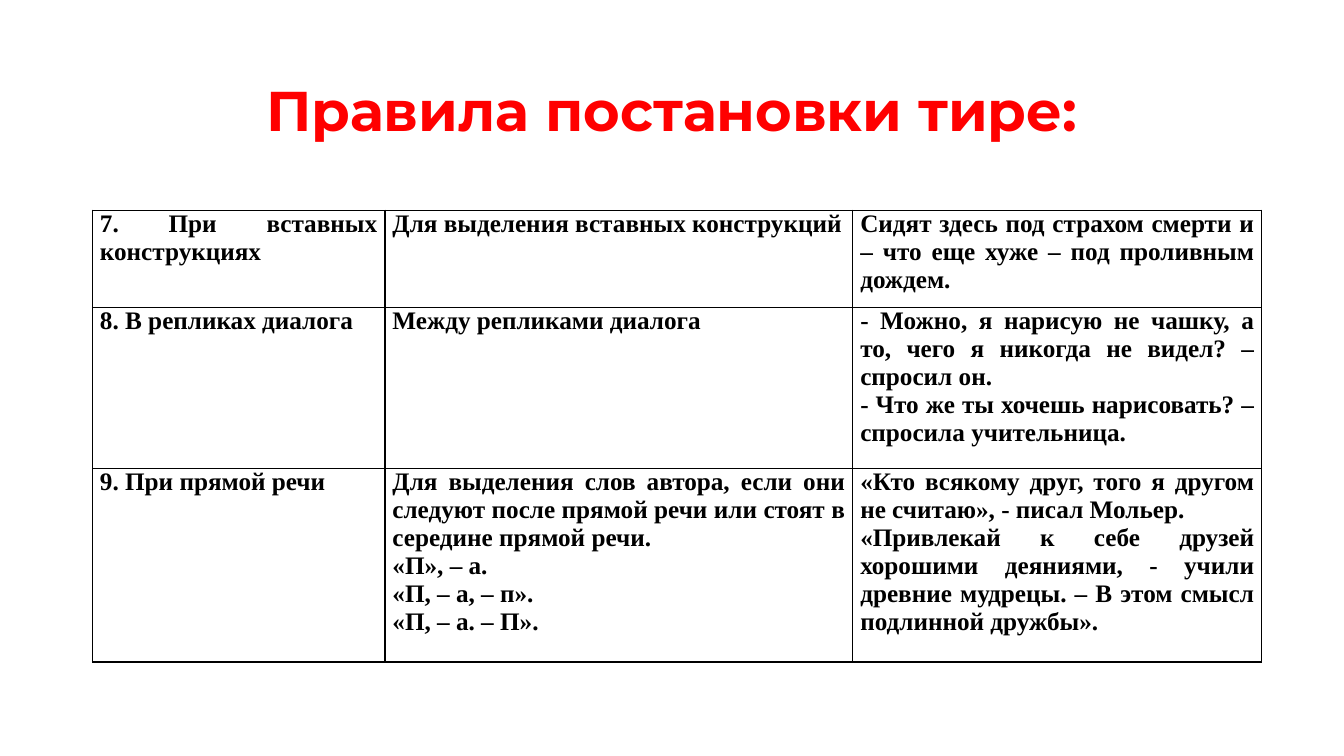
from lxml.etree import SubElement
from pptx import Presentation
from pptx.dml.color import RGBColor
from pptx.enum.text import MSO_ANCHOR, PP_ALIGN
from pptx.oxml.ns import qn
from pptx.util import Cm, Pt

COLORS = {"title": "FF0000", "text": "000000", "border": "000000"}

COLUMNS = [7.37, 11.79, 10.31]
ROWS = [2.44, 4.06, 4.88]
RULES = [
    [
        ["7. При вставных конструкциях"],
        ["Для выделения вставных конструкций"],
        ["Сидят здесь под страхом смерти и – что еще хуже – под проливным дождем."],
    ],
    [
        ["8. В репликах диалога"],
        ["Между репликами диалога"],
        [
            "- Можно, я нарисую не чашку, а то, чего я никогда не видел? – спросил он.",
            "- Что же ты хочешь нарисовать? – спросила учительница.",
        ],
    ],
    [
        ["9. При прямой речи"],
        [
            "Для выделения слов автора, если они следуют после прямой речи "
            "или стоят в середине прямой речи.",
            "«П», – а.",
            "«П, – а, – п».",
            "«П, – а. – П».",
        ],
        [
            "«Кто всякому друг, того я другом не считаю», - писал Мольер.",
            "«Привлекай к себе друзей хорошими деяниями, - учили древние мудрецы. "
            "– В этом смысл подлинной дружбы».",
        ],
    ],
]


class SlideBuilder:
    """Draw styled elements on the current slide."""

    title_font = "Montserrat"
    body_font = "Times New Roman"

    def __init__(self, slide):
        self.slide = slide

    def add_text(self, tf, paragraphs, font, size, color, align):
        tf.word_wrap = True
        for i, text in enumerate(paragraphs):
            p = tf.add_paragraph() if i else tf.paragraphs[0]
            p.alignment = align
            r = p.add_run()
            r.text = text
            r.font.name = font
            r.font.size = Pt(size)
            r.font.bold = True
            r.font.color.rgb = RGBColor.from_string(COLORS[color])

    def title(self, text, left, top, width, height):
        sp = self.slide.shapes.add_textbox(Cm(left), Cm(top), Cm(width), Cm(height))
        tf = sp.text_frame
        tf.vertical_anchor = MSO_ANCHOR.MIDDLE
        self.add_text(tf, [text], self.title_font, 40, "title", PP_ALIGN.CENTER)
        tf.paragraphs[0].line_spacing = 0.9

    def borders(self, cell):
        tc_pr = cell._tc.get_or_add_tcPr()
        for side in ("lnL", "lnR", "lnT", "lnB"):
            ln = SubElement(tc_pr, qn(f"a:{side}"), w=str(Pt(1)))
            fill = SubElement(ln, qn("a:solidFill"))
            SubElement(fill, qn("a:srgbClr"), val=COLORS["border"])

    def table(self, cells, left, top, widths, heights):
        table = self.slide.shapes.add_table(
            len(heights), len(widths), Cm(left), Cm(top), Cm(sum(widths)), Cm(sum(heights))
        ).table
        table.first_row = table.horz_banding = False
        for column, width in zip(table.columns, widths):
            column.width = Cm(width)
        for row, height, texts in zip(table.rows, heights, cells):
            row.height = Cm(height)
            for cell, paragraphs in zip(row.cells, texts):
                cell.margin_left = cell.margin_right = Cm(0.19)
                cell.margin_top = cell.margin_bottom = 0
                self.borders(cell)
                cell.fill.background()
                self.add_text(cell.text_frame, paragraphs, self.body_font, 18,
                              "text", PP_ALIGN.JUSTIFY)


def main():
    prs = Presentation()
    prs.slide_width, prs.slide_height = Cm(33.87), Cm(19.05)
    builder = SlideBuilder(prs.slides.add_slide(prs.slide_layouts[6]))
    builder.title("Правила постановки тире:", 2.33, 1.01, 29.21, 3.68)
    builder.table(RULES, 2.33, 5.3, COLUMNS, ROWS)
    prs.save("out.pptx")


if __name__ == "__main__":
    main()
